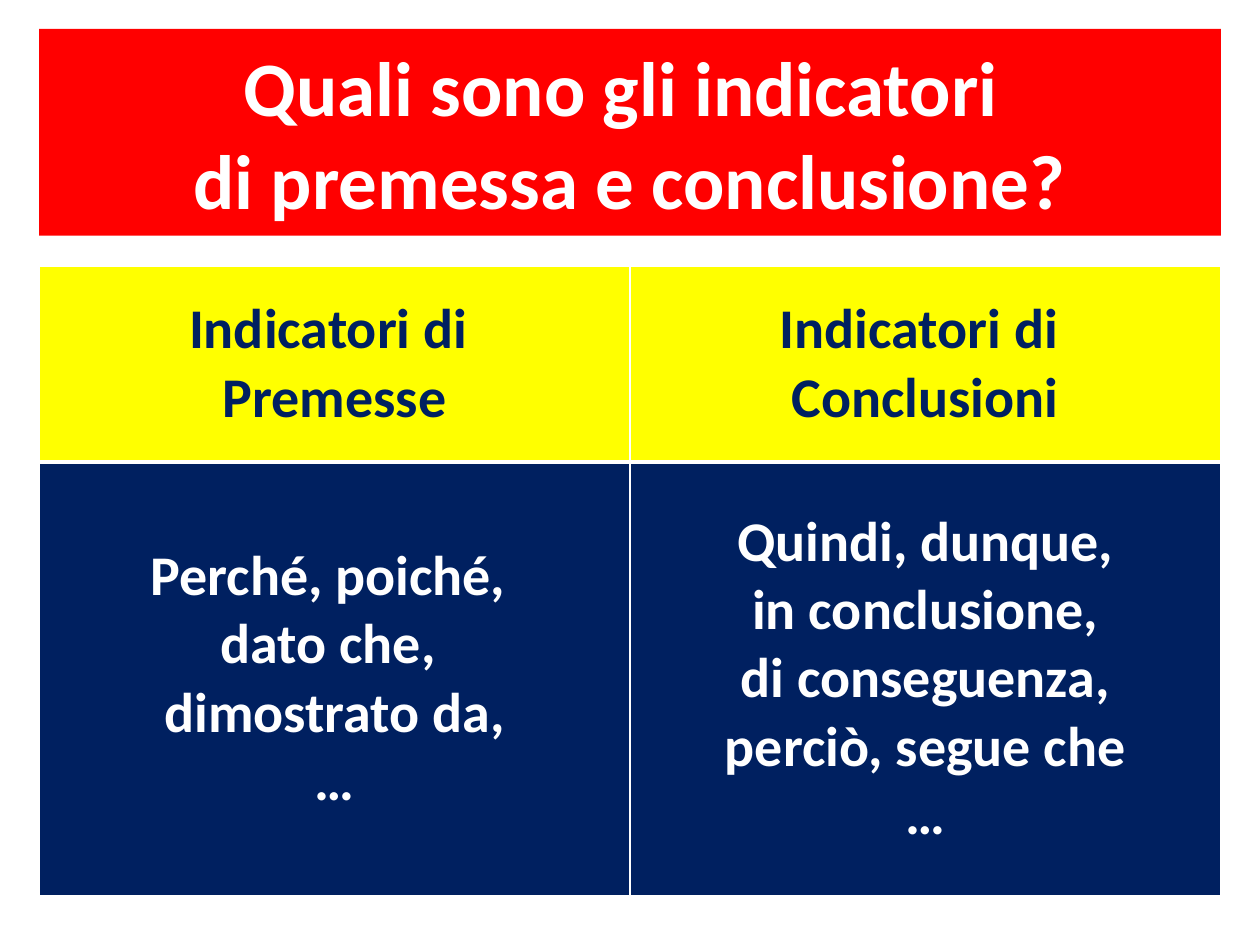
from lxml import etree
from pptx import Presentation
from pptx.dml.color import RGBColor
from pptx.enum.text import MSO_ANCHOR, PP_ALIGN
from pptx.oxml.ns import qn
from pptx.util import Cm, Pt

CENTER = PP_ALIGN.CENTER
MIDDLE = MSO_ANCHOR.MIDDLE
TITLE_ONLY = 5
FONT = "Calibri"
COLORS = {"red": "FF0000", "yellow": "FFFF00", "navy": "002060", "white": "FFFFFF"}
LEFT, WIDTH = Cm(0.79), Cm(23.82)
ROW_HEIGHTS = (Cm(3.95), Cm(8.75))
ROW_STYLES = (("yellow", "navy", 3), ("navy", "white", 1))
TITLE = "Quali sono gli indicatori \ndi premessa e conclusione?"
INDICATORS = (
    ("Indicatori di \nPremesse", "Indicatori di \nConclusioni"),
    (
        "Perché, poiché, \ndato che, \ndimostrato da,\n…",
        "Quindi, dunque,\nin conclusione,\ndi conseguenza,\nperciò, segue che\n…",
    ),
)


def paint(target, color):
    """Give a shape or cell a solid fill."""
    target.fill.solid()
    target.fill.fore_color.rgb = RGBColor.from_string(COLORS[color])


def write(text_frame, text, size, color):
    """Set centred bold text, one paragraph per line."""
    text_frame.text = text
    for paragraph in text_frame.paragraphs:
        paragraph.alignment = CENTER
        for run in paragraph.runs:
            run.font.name = FONT
            run.font.size = Pt(size)
            run.font.bold = True
            run.font.color.rgb = RGBColor.from_string(COLORS[color])


def add_borders(cell, bottom_width):
    """Draw white cell borders with a chosen bottom width in points."""
    properties = cell._tc.get_or_add_tcPr()
    widths = {"a:lnL": 1, "a:lnR": 1, "a:lnT": 1, "a:lnB": bottom_width}
    for position, (tag, width) in enumerate(widths.items()):
        line = etree.Element(qn(tag), w=str(Pt(width)))
        fill = etree.SubElement(line, qn("a:solidFill"))
        etree.SubElement(fill, qn("a:srgbClr"), val=COLORS["white"])
        properties.insert(position, line)


def format_title(slide):
    """Turn the title placeholder into a red banner."""
    title = slide.shapes.title
    title.left, title.top, title.width, title.height = LEFT, Cm(0.58), WIDTH, Cm(4.17)
    paint(title, "red")
    title.text_frame.vertical_anchor = MIDDLE
    write(title.text_frame, TITLE, 44, "white")


def add_indicator_table(slide):
    """Add the table of premise and conclusion indicators."""
    table = slide.shapes.add_table(
        len(INDICATORS), 2, LEFT, Cm(5.36), WIDTH, sum(ROW_HEIGHTS)
    ).table
    for row, height, texts, style in zip(table.rows, ROW_HEIGHTS, INDICATORS, ROW_STYLES):
        row.height = height
        fill_color, text_color, bottom_width = style
        for cell, text in zip(row.cells, texts):
            paint(cell, fill_color)
            add_borders(cell, bottom_width)
            cell.vertical_anchor = MIDDLE
            write(cell.text_frame, text, 32, text_color)
    for cell in table.rows[1].cells:
        top_line = cell._tc.tcPr.find(qn("a:lnT"))
        top_line.set("w", str(Pt(3)))


def main():
    """Build and save the slide."""
    presentation = Presentation()
    presentation.slide_width, presentation.slide_height = Cm(25.4), Cm(19.05)
    slide = presentation.slides.add_slide(presentation.slide_layouts[TITLE_ONLY])
    format_title(slide)
    add_indicator_table(slide)
    presentation.save("out.pptx")


if __name__ == "__main__":
    main()
